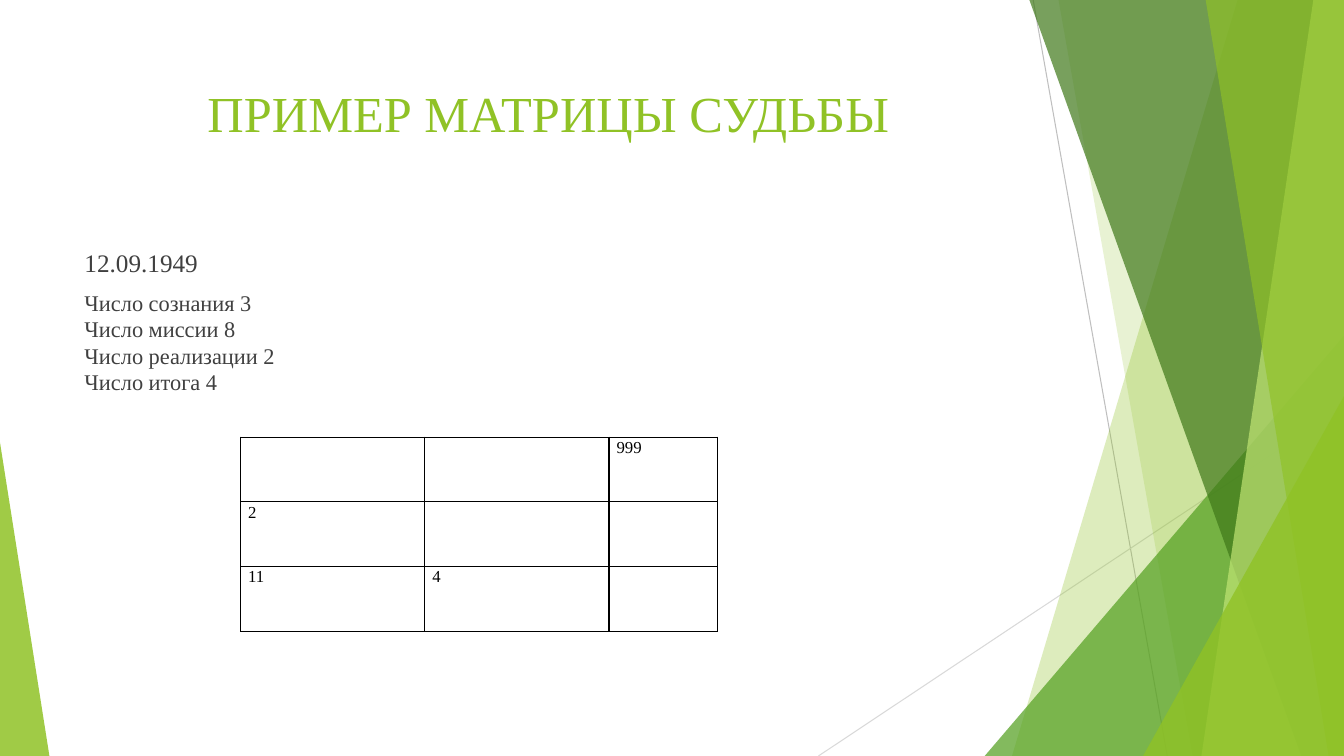
from lxml.etree import SubElement
from pptx import Presentation
from pptx.dml.color import RGBColor
from pptx.enum.shapes import MSO_CONNECTOR as Link, MSO_SHAPE as Kind
from pptx.enum.text import PP_ALIGN as Align
from pptx.oxml.ns import qn
from pptx.util import Pt

WIDE, HIGH = 960, 540
FONT = "Times New Roman"
LIME = "90C226"
TRAITS = ["Число сознания 3", "Число миссии 8", "Число реализации 2", "Число итога 4"]
MATRIX = [["", "", "999"], ["2", "", ""], ["11", "4", ""]]


def paint(fill, color, alpha=100):
    """Fill with a solid colour; alpha is opacity in percent."""
    fill.solid()
    fill.fore_color.rgb = RGBColor.from_string(color)
    if alpha < 100:
        node = fill.fore_color._xFill.find(qn("a:srgbClr"))
        SubElement(node, qn("a:alpha"), val=str(alpha * 1000))


def finish(shape, color, alpha):
    paint(shape.fill, color, alpha)
    shape.line.fill.background()
    shape.shadow.inherit = False


def add_ray(slide, start, end, color):
    ray = slide.shapes.add_connector(Link.STRAIGHT, *map(Pt, start + end))
    paint(ray.line.fill, color)
    ray.line.width = Pt(0.75)
    SubElement(ray._element.spPr, qn("a:effectLst"))


def add_facet(slide, top, base, color, alpha):
    """Full-height band from a slanted left edge to the slide's right edge."""
    rise = -0.6
    form = slide.shapes.build_freeform(Pt(top), Pt(rise))
    points = [(WIDE, rise), (WIDE, HIGH), (base, HIGH)]
    form.add_line_segments([(Pt(x), Pt(y)) for x, y in points])
    finish(form.convert_to_shape(), color, alpha)


def add_wedge(slide, box, apex, color, alpha):
    wedge = slide.shapes.add_shape(Kind.ISOSCELES_TRIANGLE, *map(Pt, box))
    wedge.adjustments[0] = apex
    finish(wedge, color, alpha)


def style(para, size, color, lead=1.07):
    para.line_spacing = lead
    para.font.name = FONT
    para.font.size = Pt(size)
    para.font.color.rgb = RGBColor.from_string(color)


def add_box(slide, box, inset):
    frame = slide.shapes.add_textbox(*map(Pt, box)).text_frame
    frame.word_wrap = True
    frame.margin_top = Pt(inset)
    return frame


def add_title(slide, text):
    para = add_box(slide, (53.3, 48.2, 676.8, 103.7), 7.5).paragraphs[0]
    para.text = text
    para.alignment = Align.CENTER
    style(para, 36, LIME)


def add_body(slide, date, lines):
    frame = add_box(slide, (53.3, 169.9, 676.8, 305.3), 5.5)
    head = frame.paragraphs[0]
    head.text = date
    head.space_after = Pt(8)
    style(head, 18, "404040")
    for line in lines:
        para = frame.add_paragraph()
        para.text = line
        style(para, 16, "404040", Pt(19))


def add_edges(cell):
    props = cell._tc.get_or_add_tcPr()
    for spot, side in enumerate(("lnL", "lnR", "lnT", "lnB")):
        edge = props.makeelement(qn(f"a:{side}"), {"w": str(Pt(1))})
        fill = SubElement(edge, qn("a:solidFill"))
        SubElement(fill, qn("a:srgbClr"), val="000000")
        props.insert(spot, edge)


def add_matrix(slide, rows):
    widths, height = (131.6, 131.6, 77.2), 46.2
    box = (171.9, 312.3, sum(widths), height * len(rows))
    frame = slide.shapes.add_table(len(rows), len(widths), *map(Pt, box))
    table = frame.table
    table.first_row = table.horz_banding = False
    for col, width in zip(table.columns, widths):
        col.width = Pt(width)
    for row, values in zip(table.rows, rows):
        row.height = Pt(height)
        for cell, value in zip(row.cells, values):
            cell.text = value
            cell.margin_left = cell.margin_right = Pt(5.4)
            cell.margin_top = cell.margin_bottom = 0
            style(cell.text_frame.paragraphs[0], 12, "000000")
            cell.fill.background()
            add_edges(cell)


def add_decor(slide):
    add_ray(slide, (738, 0), (833.8, HIGH), "BFBFBF")
    add_ray(slide, (WIDE, 290.2), (584.6, HIGH), "D9D9D9")
    add_facet(slide, 884.2, 722.9, LIME, 30)
    add_facet(slide, 756, 851.8, LIME, 20)
    add_wedge(slide, (703.4, 239.8, 256.6, 300.2), 1, "54A021", 72)
    add_facet(slide, 735.1, 929.5, "3F7819", 70)
    add_facet(slide, 938.2, 858.2, "C0E474", 70)
    add_facet(slide, 861.1, 949, LIME, 65)
    add_wedge(slide, (816.5, 283, 143.5, 257), 1, LIME, 80)
    add_wedge(slide, (0, 316.1, 35.3, 223.9), 0, LIME, 85)


def main():
    deck = Presentation()
    deck.slide_width, deck.slide_height = Pt(WIDE), Pt(HIGH)
    slide = deck.slides.add_slide(deck.slide_layouts[6])
    add_decor(slide)
    add_title(slide, "ПРИМЕР МАТРИЦЫ СУДЬБЫ")
    add_body(slide, "12.09.1949", TRAITS)
    add_matrix(slide, MATRIX)
    deck.save("out.pptx")


if __name__ == "__main__":
    main()
